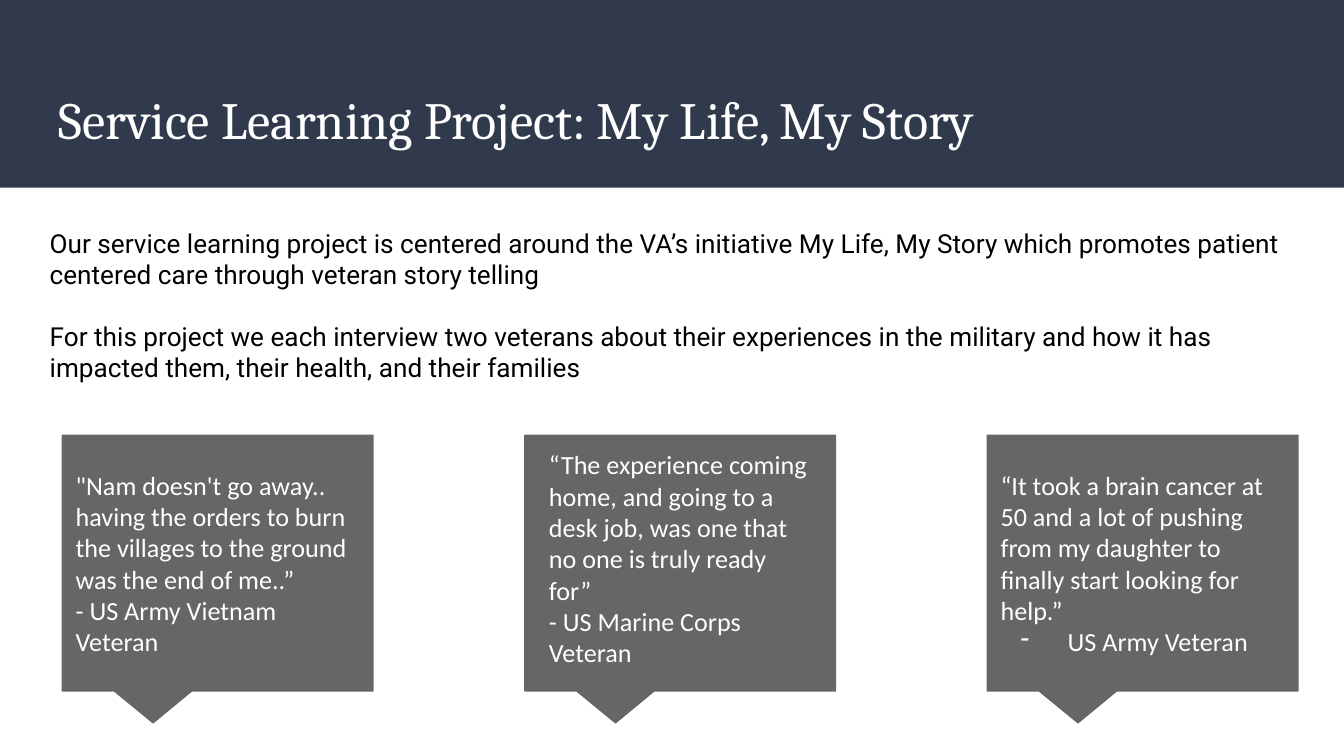
from lxml.etree import SubElement
from pptx import Presentation
from pptx.dml.color import RGBColor as RGB
from pptx.enum.shapes import MSO_SHAPE as SHAPE
from pptx.enum.text import MSO_ANCHOR as ANCHOR, PP_ALIGN as ALIGN
from pptx.oxml.ns import qn
from pptx.util import Cm, Pt

# Content
TITLE = "Service Learning Project: My Life, My Story"
INTRO = [
    "Our service learning project is centered around the VA’s initiative My Life, My Story "
    "which promotes patient centered care through veteran story telling",
    "For this project we each interview two veterans about their experiences in the military "
    "and how it has impacted them, their health, and their families",
]
QUOTES = [
    {"lines": ["\"Nam doesn't go away.. having the orders to burn the villages to the ground "
               "was the end of me..”", "- US Army Vietnam Veteran"]},
    {"lines": ["“The experience coming home, and going to a desk job, was one that no one is "
               "truly ready for”", "- US Marine Corps Veteran"], "own_box": True},
    {"lines": ["“It took a brain cancer at 50 and a lot of pushing from my daughter to finally "
               "start looking for help.”", "US Army Veteran"], "dash": True},
]
COLORS = {"navy": "31394D", "gray": "666666", "white": "FFFFFF", "black": "000000"}

# Layout in cm
WIDTH, HEIGHT = 25.4, 14.29
INSET = 0.25
CARD_LEFT, CARD_TOP, CARD_W, CARD_H = 1.18, 8.23, 5.87, 4.83
CARD_STEP = 8.74
BOX_W = 5.46

prs = Presentation()
prs.slide_width, prs.slide_height = Cm(WIDTH), Cm(HEIGHT)
s = prs.slides.add_slide(prs.slide_layouts[6])


def color(name):
    return RGB.from_string(COLORS[name])


def add_block(kind, x, y, w, h, fill):
    sp = s.shapes.add_shape(kind, Cm(x), Cm(y), Cm(w), Cm(h))
    sp.shadow.inherit = False
    sp.fill.solid()
    sp.fill.fore_color.rgb = color(fill)
    sp.line.fill.background()
    return sp


def add_box(x, y, w, h):
    return s.shapes.add_textbox(Cm(x), Cm(y), Cm(w), Cm(h))


def add_dash(p):
    pPr = p._p.get_or_add_pPr()
    pPr.set("marL", str(Cm(1.27)))
    pPr.set("indent", str(-Cm(0.89)))
    SubElement(pPr, qn("a:buChar"), char="-")


def write(sp, lines, font="Calibri", size=14, fill="white", anchor=ANCHOR.TOP, gap=0, dash=False):
    tf = sp.text_frame
    tf.word_wrap = True
    tf.vertical_anchor = anchor
    tf.margin_left = tf.margin_right = tf.margin_top = tf.margin_bottom = Cm(INSET)
    for i, line in enumerate(lines):
        p = tf.paragraphs[0] if i == 0 else tf.add_paragraph()
        p.alignment = ALIGN.LEFT
        if i and gap:
            p.space_before = Pt(gap)
        if i and dash:
            add_dash(p)
        r = p.add_run()
        r.text = line
        r.font.name, r.font.size = font, Pt(size)
        r.font.color.rgb = color(fill)


# Title band
add_block(SHAPE.RECTANGLE, 0, 0, WIDTH, 3.55, "navy")
write(add_box(0.86, 1.4, 23.67, 1.73), [TITLE], font="Cambria", size=28)

# Introduction
write(add_box(0.69, 4.04, 24.03, 3.51), INTRO, font="Roboto", fill="black", gap=16.4)

# Quote callouts
for i, quote in enumerate(QUOTES):
    x = CARD_LEFT + i * CARD_STEP
    card = add_block(SHAPE.ROUNDED_RECTANGULAR_CALLOUT, x, CARD_TOP, CARD_W, CARD_H, "gray")
    for k, value in enumerate((-0.208, 0.625, 0)):
        card.adjustments[k] = value
    card.line.color.rgb = color("gray")
    card.line.width = Pt(0.75)
    if quote.get("own_box"):
        box = add_box(x + (CARD_W - BOX_W) / 2, CARD_TOP, BOX_W, 4.7)
        write(box, quote["lines"])
    else:
        write(card, quote["lines"], anchor=ANCHOR.MIDDLE, dash=quote.get("dash", False))

prs.save("out.pptx")
